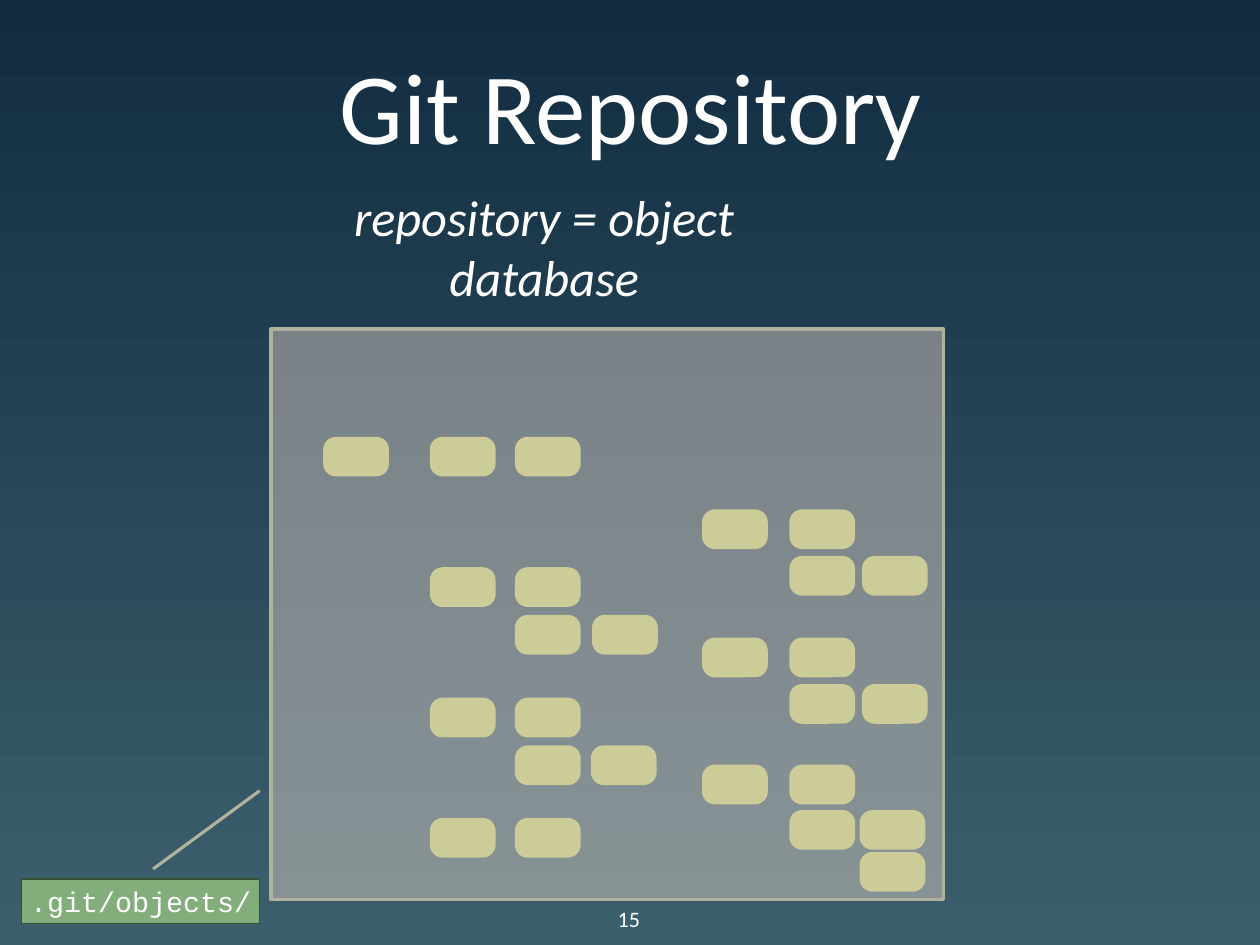
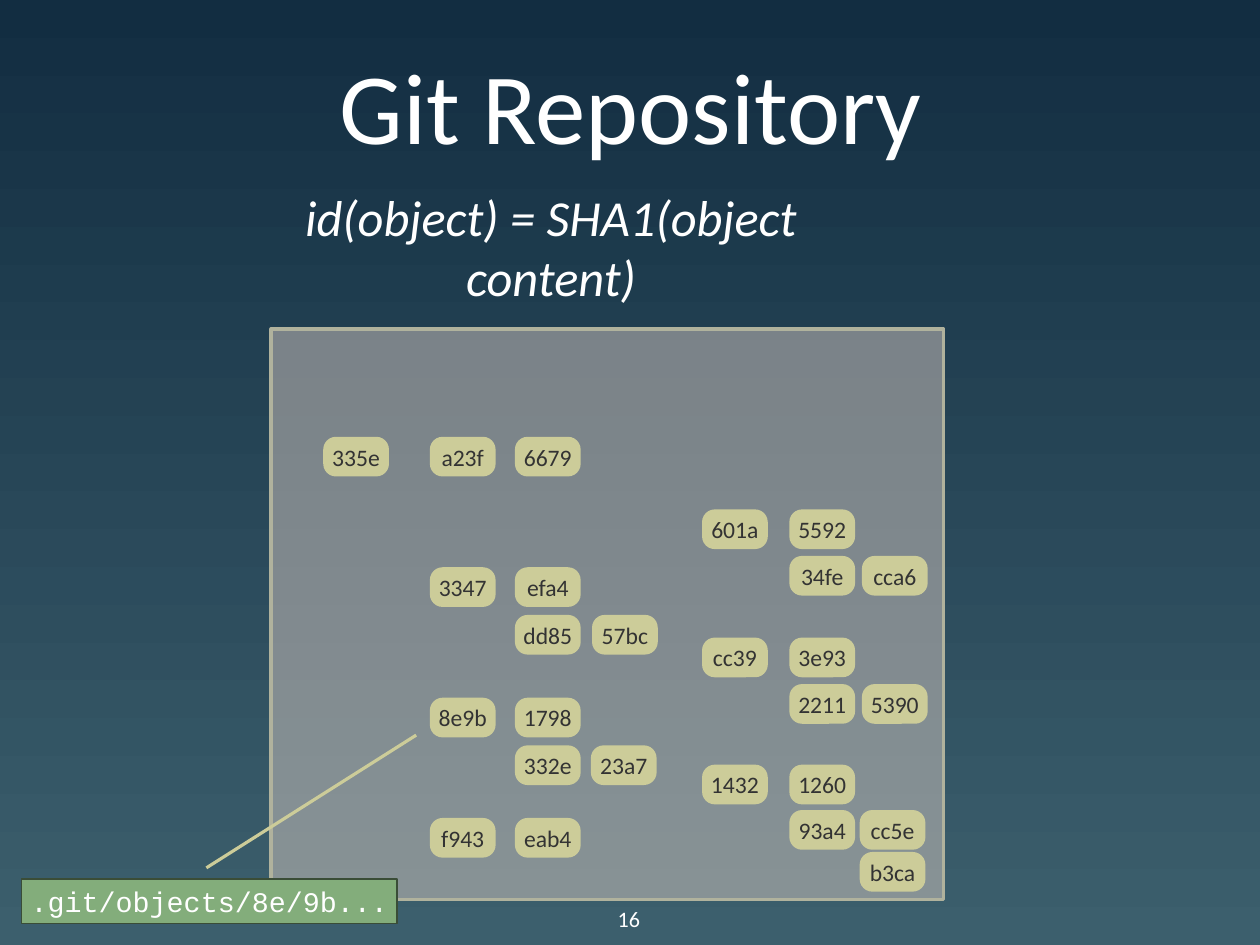
from typing import NamedTuple

from lxml import etree
from pptx import Presentation
from pptx.dml.color import RGBColor
from pptx.enum.shapes import MSO_CONNECTOR, MSO_SHAPE
from pptx.enum.text import MSO_ANCHOR, MSO_AUTO_SIZE, PP_ALIGN
from pptx.oxml.ns import qn
from pptx.util import Inches, Pt

RECT = MSO_SHAPE.RECTANGLE
ROUNDED = MSO_SHAPE.ROUNDED_RECTANGLE
STRAIGHT = MSO_CONNECTOR.STRAIGHT
MIDDLE = MSO_ANCHOR.MIDDLE
CENTER = PP_ALIGN.CENTER
NO_FIT = MSO_AUTO_SIZE.NONE

COLORS = {
    "sky_top": "122D41",
    "sky_bottom": "3C5F6D",
    "white": "FFFFFF",
    "database": "D4C7C0",
    "database_edge": "B0B29D",
    "object": "CCCC99",
    "object_id": "333333",
    "path_label": "83AD7B",
    "path_label_edge": "3A4D37",
}
SANS, MONO = "Calibri", "Courier New"
TITLE = "Git Repository"


class Box(NamedTuple):
    left: float
    top: float
    width: float
    height: float

    def emu(self) -> tuple:
        return tuple(Inches(value) for value in self)


class ObjectRow(NamedTuple):
    top: float
    lefts: tuple[float, ...]
    ids: tuple[str, ...]


class Pointer(NamedTuple):
    start: tuple[float, float]
    end: tuple[float, float]
    color: str


class RepositorySlide(NamedTuple):
    number: int
    statement: str
    statement_box: Box
    show_ids: bool
    path_text: str
    path_width: float
    pointer: Pointer


TITLE_BOX = Box(1.09, 0.22, 8.94, 1.39)
DATABASE_BOX = Box(2.39, 2.9, 5.93, 5.03)
NUMBER_BOX = Box(5.4, 7.93, 0.29, 0.31)
OBJECT_WIDTH, OBJECT_HEIGHT = 0.58, 0.35

COMMIT, TREE, BLOB = 2.85, 3.79, 4.54
RIGHT_TREE, RIGHT_BLOB, RIGHT_EDGE = 6.19, 6.96, 7.6
OBJECT_ROWS = (
    ObjectRow(3.85, (COMMIT, TREE, BLOB), ("335e", "a23f", "6679")),
    ObjectRow(5.0, (TREE, BLOB), ("3347", "efa4")),
    ObjectRow(5.42, (BLOB, 5.22), ("dd85", "57bc")),
    ObjectRow(6.15, (TREE, BLOB), ("8e9b", "1798")),
    ObjectRow(6.57, (BLOB, 5.21), ("332e", "23a7")),
    ObjectRow(7.21, (TREE, BLOB), ("f943", "eab4")),
    ObjectRow(4.49, (RIGHT_TREE, RIGHT_BLOB), ("601a", "5592")),
    ObjectRow(4.9, (RIGHT_BLOB, RIGHT_EDGE), ("34fe", "cca6")),
    ObjectRow(5.62, (RIGHT_TREE, RIGHT_BLOB), ("cc39", "3e93")),
    ObjectRow(6.03, (RIGHT_BLOB, RIGHT_EDGE), ("2211", "5390")),
    ObjectRow(6.74, (RIGHT_TREE, RIGHT_BLOB), ("1432", "1260")),
    ObjectRow(7.14, (RIGHT_BLOB, 7.58), ("93a4", "cc5e")),
    ObjectRow(7.51, (7.58,), ("b3ca",)),
)

SLIDES = (
    RepositorySlide(
        15, "repository = object database", Box(3.1, 1.63, 3.4, 1.08), False,
        ".git/objects/", 2.1, Pointer((2.29, 6.97), (1.35, 7.66), "database_edge"),
    ),
    RepositorySlide(
        16, "id(object) = SHA1(object content)", Box(2.66, 1.63, 4.4, 1.08), True,
        ".git/objects/8e/9b...", 3.31, Pointer((3.67, 6.48), (1.82, 7.65), "object"),
    ),
)


def rgb(name: str) -> RGBColor:
    return RGBColor.from_string(COLORS[name])


def write(frame, text: str, size: float, color: str = "white",
          font: str = SANS, italic: bool = False) -> None:
    """Put one centred paragraph of formatted text into a text frame."""
    frame.text = text
    paragraph = frame.paragraphs[0]
    paragraph.alignment = CENTER
    for run in paragraph.runs:
        run.font.name = font
        run.font.size = Pt(size)
        run.font.italic = italic
        run.font.color.rgb = rgb(color)


def center_without_margins(frame) -> None:
    frame.margin_left = frame.margin_right = 0
    frame.margin_top = frame.margin_bottom = 0
    frame.vertical_anchor = MIDDLE


def add_panel(slide, kind, box: Box, fill: str, edge: str = "", edge_width: float = 0):
    panel = slide.shapes.add_shape(kind, *box.emu())
    panel.shadow.inherit = False
    panel.fill.solid()
    panel.fill.fore_color.rgb = rgb(fill)
    if edge:
        panel.line.color.rgb = rgb(edge)
        panel.line.width = Pt(edge_width)
    else:
        panel.line.fill.background()
    center_without_margins(panel.text_frame)
    return panel


def add_title(slide) -> None:
    title = slide.shapes.title
    title.left, title.top, title.width, title.height = TITLE_BOX.emu()
    center_without_margins(title.text_frame)
    title.text_frame.auto_size = NO_FIT
    write(title.text_frame, TITLE, 64)


def add_database(slide) -> None:
    database = add_panel(slide, RECT, DATABASE_BOX, "database", "database_edge", 2)
    solid_color = database._element.spPr.find(qn("a:solidFill"))[0]
    etree.SubElement(solid_color, qn("a:alpha"), val="50000")


def add_objects(slide, show_ids: bool) -> None:
    for row in OBJECT_ROWS:
        for left, object_id in zip(row.lefts, row.ids):
            box = Box(left, row.top, OBJECT_WIDTH, OBJECT_HEIGHT)
            git_object = add_panel(slide, ROUNDED, box, "object")
            git_object.adjustments[0] = 0.32
            if show_ids:
                write(git_object.text_frame, object_id, 15, "object_id")


def add_statement(slide, text: str, box: Box) -> None:
    frame = slide.shapes.add_textbox(*box.emu()).text_frame
    center_without_margins(frame)
    frame.word_wrap = True
    write(frame, text, 32, italic=True)


def add_number(slide, number: int) -> None:
    frame = slide.shapes.add_textbox(*NUMBER_BOX.emu()).text_frame
    frame.margin_left = frame.margin_right = 0
    frame.word_wrap = False
    write(frame, str(number), 14)


def add_path_label(slide, text: str, width: float) -> None:
    label = add_panel(slide, RECT, Box(0.19, 7.75, width, 0.39),
                      "path_label", "path_label_edge", 1)
    write(label.text_frame, text, 18, font=MONO)


def add_pointer(slide, pointer: Pointer) -> None:
    ends = (Inches(value) for value in pointer.start + pointer.end)
    line = slide.shapes.add_connector(STRAIGHT, *ends)
    line.line.color.rgb = rgb(pointer.color)
    line.line.width = Pt(2)
    etree.SubElement(line._element.spPr, qn("a:effectLst"))


def set_background(master) -> None:
    fill = master.background.fill
    fill.gradient()
    fill.gradient_angle = 270
    for stop, color in zip(fill.gradient_stops, ("sky_top", "sky_bottom")):
        stop.color.rgb = rgb(color)


def build_slide(prs, content: RepositorySlide) -> None:
    slide = prs.slides.add_slide(prs.slide_layouts.get_by_name("Title Only"))
    add_title(slide)
    add_database(slide)
    add_objects(slide, content.show_ids)
    add_statement(slide, content.statement, content.statement_box)
    add_number(slide, content.number)
    add_path_label(slide, content.path_text, content.path_width)
    add_pointer(slide, content.pointer)


def main() -> None:
    prs = Presentation()
    prs.slide_width, prs.slide_height = Inches(11.11), Inches(8.33)
    set_background(prs.slide_master)
    for content in SLIDES:
        build_slide(prs, content)
    prs.save("out.pptx")


if __name__ == "__main__":
    main()
